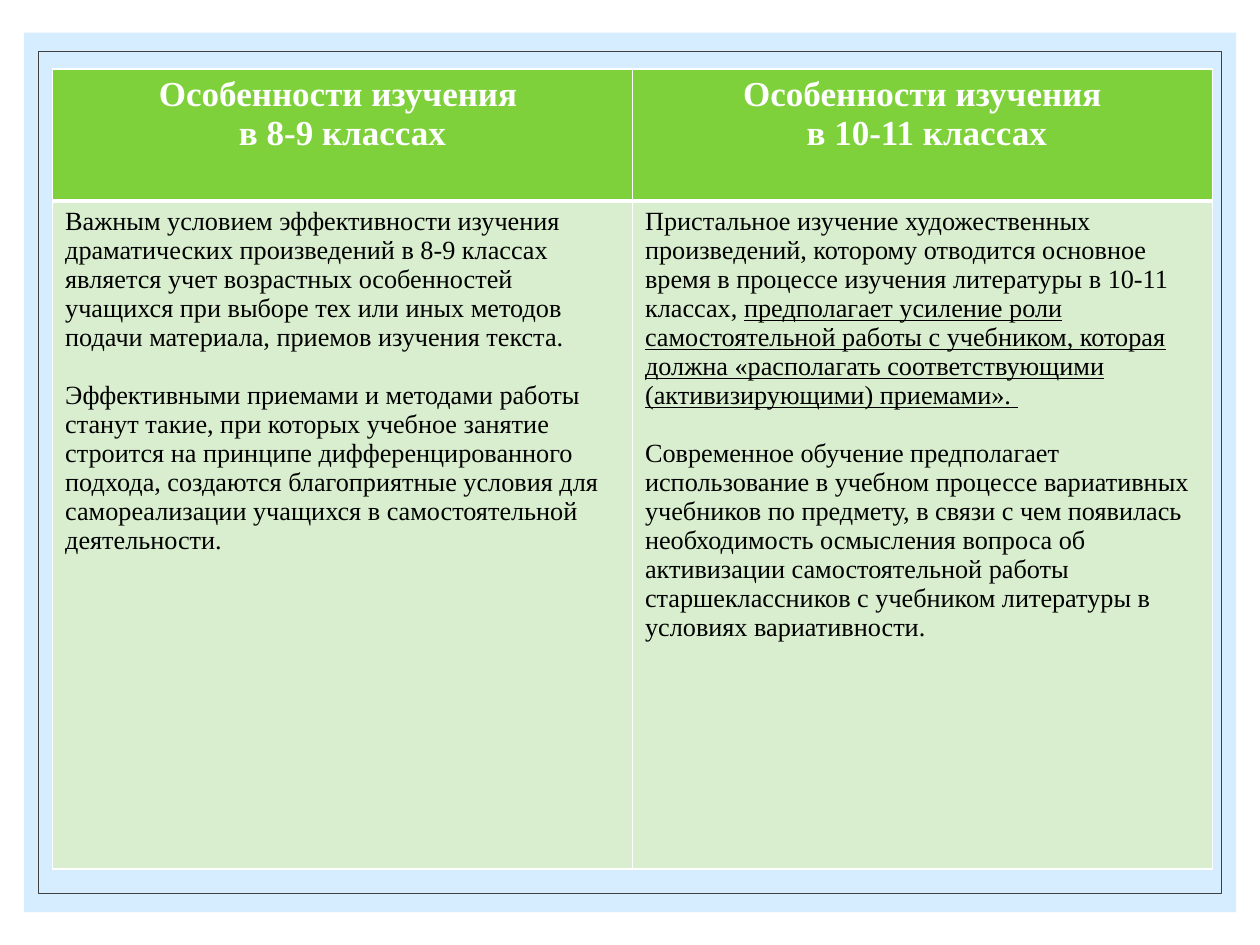
import pptx
import pptx.util
from lxml import etree
from pptx.dml.color import RGBColor
from pptx.enum.shapes import MSO_SHAPE
from pptx.enum.text import PP_ALIGN
from pptx.oxml.ns import qn
from pptx.util import Cm, Pt

WHITE = RGBColor(0xFF, 0xFF, 0xFF)
BLACK = RGBColor(0x00, 0x00, 0x00)
PALE_BLUE = RGBColor(0xD6, 0xEC, 0xFF)
DARK_GREY = RGBColor(0x40, 0x40, 0x40)
GREEN = RGBColor(0x7F, 0xD1, 0x3B)
PALE_GREEN = RGBColor(0xD8, 0xEE, 0xCE)

# A paragraph is a list of (text, underlined) runs.
HEADINGS = [
    [[("Особенности изучения ", False)], [("в 8-9 классах", False)]],
    [[("Особенности изучения", False)], [(" в 10-11 классах", False)]],
]
FEATURES = [
    [
        [("Важным условием эффективности изучения драматических произведений "
          "в 8-9 классах является учет возрастных особенностей учащихся при "
          "выборе тех или иных методов подачи материала, приемов изучения "
          "текста.", False)],
        [("Эффективными приемами и методами работы станут такие, при которых "
          "учебное занятие строится на принципе дифференцированного подхода, "
          "создаются благоприятные условия для самореализации учащихся в "
          "самостоятельной деятельности.", False)],
    ],
    [
        [("Пристальное изучение художественных произведений, которому "
          "отводится основное время в процессе изучения литературы в 10-11 "
          "классах, ", False),
         ("предполагает усиление роли самостоятельной работы с учебником, "
          "которая должна «располагать соответствующими (активизирующими) "
          "приемами». ", True)],
        [("Современное обучение предполагает использование в учебном процессе "
          "вариативных учебников по предмету, в связи с чем появилась "
          "необходимость осмысления вопроса об активизации самостоятельной "
          "работы старшеклассников с учебником литературы в условиях "
          "вариативности.", False)],
    ],
]


class SlideBuilder:
    font_name = "Times New Roman"

    def __init__(self, slide):
        self.slide = slide

    def rectangle(self, left, top, width, height, fill=None, line=None):
        panel = self.slide.shapes.add_shape(
            MSO_SHAPE.RECTANGLE, Cm(left), Cm(top), Cm(width), Cm(height))
        panel.shadow.inherit = False
        if fill is None:
            panel.fill.background()
        else:
            panel.fill.solid()
            panel.fill.fore_color.rgb = fill
        if line is None:
            panel.line.fill.background()
        else:
            panel.line.color.rgb = line
            panel.line.width = Pt(0.5)

    def table(self, left, top, column_widths, row_heights):
        frame = self.slide.shapes.add_table(
            len(row_heights), len(column_widths), Cm(left), Cm(top),
            Cm(sum(column_widths)), Cm(sum(row_heights)))
        grid = frame.table
        grid.first_row = grid.horz_banding = False
        for column, width in zip(grid.columns, column_widths):
            column.width = Cm(width)
        for row, height in zip(grid.rows, row_heights):
            row.height = Cm(height)
        return grid

    def row(self, cells, contents, fill, color, size, bold=False,
            align=PP_ALIGN.LEFT, gap=0, top_line=1, bottom_line=1):
        for cell, paragraphs in zip(cells, contents):
            cell.fill.solid()
            cell.fill.fore_color.rgb = fill
            self.borders(cell, top_line, bottom_line)
            for index, runs in enumerate(paragraphs):
                text_frame = cell.text_frame
                paragraph = (text_frame.add_paragraph() if index
                             else text_frame.paragraphs[0])
                paragraph.alignment = align
                paragraph.space_before = Pt(gap if index else 0)
                font = paragraph.font
                font.name, font.size, font.bold = self.font_name, Pt(size), bold
                font.color.rgb = color
                for text, underlined in runs:
                    run = paragraph.add_run()
                    run.text = text
                    if underlined:
                        run.font.underline = True

    def borders(self, cell, top_line, bottom_line):
        """Draw white cell edges; their XML must come before the fill."""
        properties = cell._tc.get_or_add_tcPr()
        edges = {"a:lnL": 1, "a:lnR": 1, "a:lnT": top_line, "a:lnB": bottom_line}
        for position, (tag, points) in enumerate(edges.items()):
            edge = etree.Element(qn(tag), w=str(Pt(points)))
            solid = etree.SubElement(edge, qn("a:solidFill"))
            etree.SubElement(solid, qn("a:srgbClr"), val=str(WHITE))
            properties.insert(position, edge)


def main():
    presentation = pptx.Presentation()
    presentation.slide_width = Cm(25.4)
    presentation.slide_height = Cm(19.05)
    builder = SlideBuilder(
        presentation.slides.add_slide(presentation.slide_layouts[6]))

    builder.rectangle(0.48, 0.66, 24.44, 17.73, fill=PALE_BLUE)
    builder.rectangle(0.77, 1.04, 23.86, 16.97, line=DARK_GREY)

    comparison = builder.table(1.06, 1.39, [11.69] * 2, [2.66, 13.47])
    heading_row, feature_row = comparison.rows
    builder.row(heading_row.cells, HEADINGS, GREEN, WHITE, 20, bold=True,
                align=PP_ALIGN.CENTER, bottom_line=3)
    builder.row(feature_row.cells, FEATURES, PALE_GREEN, BLACK, 15,
                gap=16.5, top_line=3)

    presentation.save("out.pptx")


if __name__ == "__main__":
    main()
